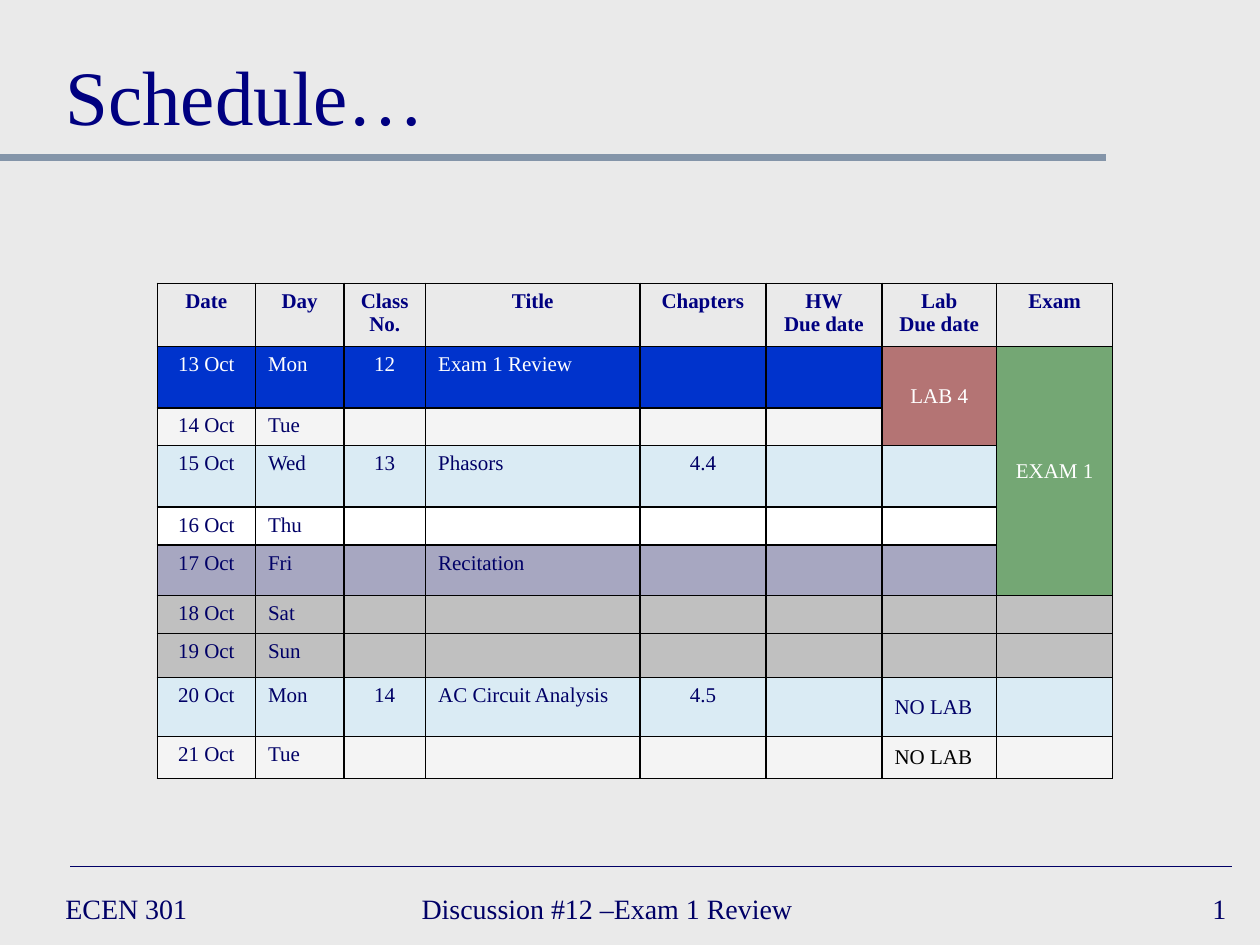
from lxml import etree
from pptx import Presentation
from pptx.dml.color import RGBColor
from pptx.enum.shapes import MSO_CONNECTOR
from pptx.enum.text import MSO_ANCHOR, PP_ALIGN
from pptx.oxml.ns import qn
from pptx.util import Cm, Pt

LEFT, CENTER, RIGHT = PP_ALIGN.LEFT, PP_ALIGN.CENTER, PP_ALIGN.RIGHT
TOP, MIDDLE, BOTTOM = MSO_ANCHOR.TOP, MSO_ANCHOR.MIDDLE, MSO_ANCHOR.BOTTOM
STRAIGHT = MSO_CONNECTOR.STRAIGHT

FONT = "Times New Roman"
BACKGROUND = RGBColor(0xEA, 0xEA, 0xEA)
STEEL = RGBColor(0x84, 0x95, 0xA9)
NAVY = RGBColor(0x00, 0x00, 0x66)
HEADING = RGBColor(0x00, 0x00, 0x80)
WHITE = RGBColor(0xFF, 0xFF, 0xFF)
BLACK = RGBColor(0x00, 0x00, 0x00)
BLUE = RGBColor(0x00, 0x33, 0xCC)
ICE = RGBColor(0xCC, 0xEC, 0xFF)
PURPLE = RGBColor(0x66, 0x66, 0x99)
GRAY = RGBColor(0xC0, 0xC0, 0xC0)
MAROON = RGBColor(0x80, 0x00, 0x00)
GREEN = RGBColor(0x00, 0x66, 0x00)

COLUMN_WIDTHS = [1.98, 1.78, 1.65, 4.32, 2.54, 2.34, 2.31, 2.34]
CENTERED_COLUMNS = {0, 2, 4, 7}
LAB, EXAM = 6, 7
HEADERS = ["Date", "Day", "Class\nNo.", "Title", "Chapters",
           "HW\nDue date", "Lab\nDue date", "Exam"]
HEADER_HEIGHT = 1.24

# Height, fill, opacity in percent, then date, day, class, title, chapters, HW, lab, exam
DAYS = [
    (1.24, BLUE, 100, ["13 Oct", "Mon", "12", "Exam 1 Review", "", "", "LAB 4", "EXAM 1"]),
    (0.74, WHITE, 50, ["14 Oct", "Tue", "", "", "", "", "", ""]),
    (1.24, ICE, 50, ["15 Oct", "Wed", "13", "Phasors", "4.4", "", "", ""]),
    (0.76, WHITE, 100, ["16 Oct", "Thu", "", "", "", "", "", ""]),
    (1.02, PURPLE, 50, ["17 Oct", "Fri", "", "Recitation", "", "", "", ""]),
    (0.76, GRAY, 100, ["18 Oct", "Sat", "", "", "", "", "", ""]),
    (0.89, GRAY, 100, ["19 Oct", "Sun", "", "", "", "", "", ""]),
    (1.19, ICE, 50, ["20 Oct", "Mon", "14", "AC Circuit Analysis", "4.5", "", "NO LAB", ""]),
    (0.84, WHITE, 50, ["21 Oct", "Tue", "", "", "", "", "NO LAB", ""]),
]


def format_text(frame, size, color, align=LEFT, bold=False):
    for paragraph in frame.paragraphs:
        paragraph.alignment = align
        for run in paragraph.runs:
            run.font.name = FONT
            run.font.size = Pt(size)
            run.font.bold = bold
            run.font.color.rgb = color
        if not paragraph.runs:
            # An empty cell still needs a text size, or its row grows
            etree.SubElement(paragraph._p, qn("a:endParaRPr"), sz=str(size * 100))


def add_text(slide, text, left, top, width, height, size, color, align=LEFT, anchor=MIDDLE):
    frame = slide.shapes.add_textbox(Cm(left), Cm(top), Cm(width), Cm(height)).text_frame
    frame.word_wrap = True
    frame.vertical_anchor = anchor
    frame.text = text
    format_text(frame, size, color, align)


def add_rule(slide, left, right, y, color, width):
    rule = slide.shapes.add_connector(STRAIGHT, Cm(left), Cm(y), Cm(right), Cm(y))
    rule.line.color.rgb = color
    rule.line.width = Pt(width)
    etree.SubElement(rule._element.spPr, qn("a:effectLst"))


def add_borders(cell):
    properties = cell._tc.get_or_add_tcPr()
    for side in ("lnL", "lnR", "lnT", "lnB"):
        border = etree.SubElement(properties, qn(f"a:{side}"), w=str(Pt(1)))
        fill = etree.SubElement(border, qn("a:solidFill"))
        etree.SubElement(fill, qn("a:srgbClr"), val=str(BLACK))


def fill_cell(cell, color, opacity):
    cell.fill.solid()
    cell.fill.fore_color.rgb = color
    if opacity < 100:
        swatch = cell._tc.tcPr.find(qn("a:solidFill")).find(qn("a:srgbClr"))
        etree.SubElement(swatch, qn("a:alpha"), val=str(opacity * 1000))


def write_cell(cell, text, color, align, anchor=TOP, bold=False):
    cell.text_frame.text = text
    cell.vertical_anchor = anchor
    format_text(cell.text_frame, 12, color, align, bold)
    add_borders(cell)


def add_schedule(slide):
    heights = [HEADER_HEIGHT] + [day[0] for day in DAYS]
    table = slide.shapes.add_table(
        len(heights), len(HEADERS), Cm(3.17), Cm(5.71),
        Cm(sum(COLUMN_WIDTHS)), Cm(sum(heights))).table
    table.first_row = table.horz_banding = False
    for column, width in zip(table.columns, COLUMN_WIDTHS):
        column.width = Cm(width)
    for row, height in zip(table.rows, heights):
        row.height = Cm(height)

    # Lab and exam windows that last several days
    table.cell(1, LAB).merge(table.cell(2, LAB))
    table.cell(1, EXAM).merge(table.cell(5, EXAM))
    window_fills = {LAB: MAROON, EXAM: GREEN}

    for c, header in enumerate(HEADERS):
        cell = table.cell(0, c)
        write_cell(cell, header, HEADING, CENTER, bold=True)
        cell.fill.background()

    for r, (_, row_fill, row_opacity, texts) in enumerate(DAYS, start=1):
        for c, text in enumerate(texts):
            cell = table.cell(r, c)
            fill, opacity, color = row_fill, row_opacity, NAVY
            if cell.is_merge_origin:
                fill, opacity = window_fills[c], 50
            if r == 1:
                color = WHITE
            elif r == len(DAYS) and c == LAB:
                color = BLACK
            centered = c in CENTERED_COLUMNS or cell.is_merge_origin
            write_cell(cell, text, color, CENTER if centered else LEFT,
                       MIDDLE if c >= LAB else TOP)
            fill_cell(cell, fill, opacity)


def main():
    prs = Presentation()
    prs.slide_width, prs.slide_height = Cm(25.4), Cm(19.05)
    slide = prs.slides.add_slide(prs.slide_layouts[6])
    slide.background.fill.solid()
    slide.background.fill.fore_color.rgb = BACKGROUND

    # Rules under the title and above the footer
    add_rule(slide, 0, 22.3, 3.17, STEEL, 4)
    add_rule(slide, 1.42, 24.84, 17.47, NAVY, 1)

    # Footer
    add_text(slide, "ECEN 301", 1.07, 17.78, 5.5, 1.07, 16, NAVY)
    add_text(slide, "Discussion #12 –Exam 1 Review", 8.25, 17.78, 9.73, 1.07, 16, NAVY)
    add_text(slide, "1", 19.69, 17.78, 5.28, 1.07, 16, NAVY, RIGHT)

    # Schedule and title
    add_schedule(slide)
    add_text(slide, "Schedule…", 1.07, 0.43, 23.5, 2.54, 44, HEADING, anchor=BOTTOM)

    prs.save("out.pptx")


if __name__ == "__main__":
    main()
